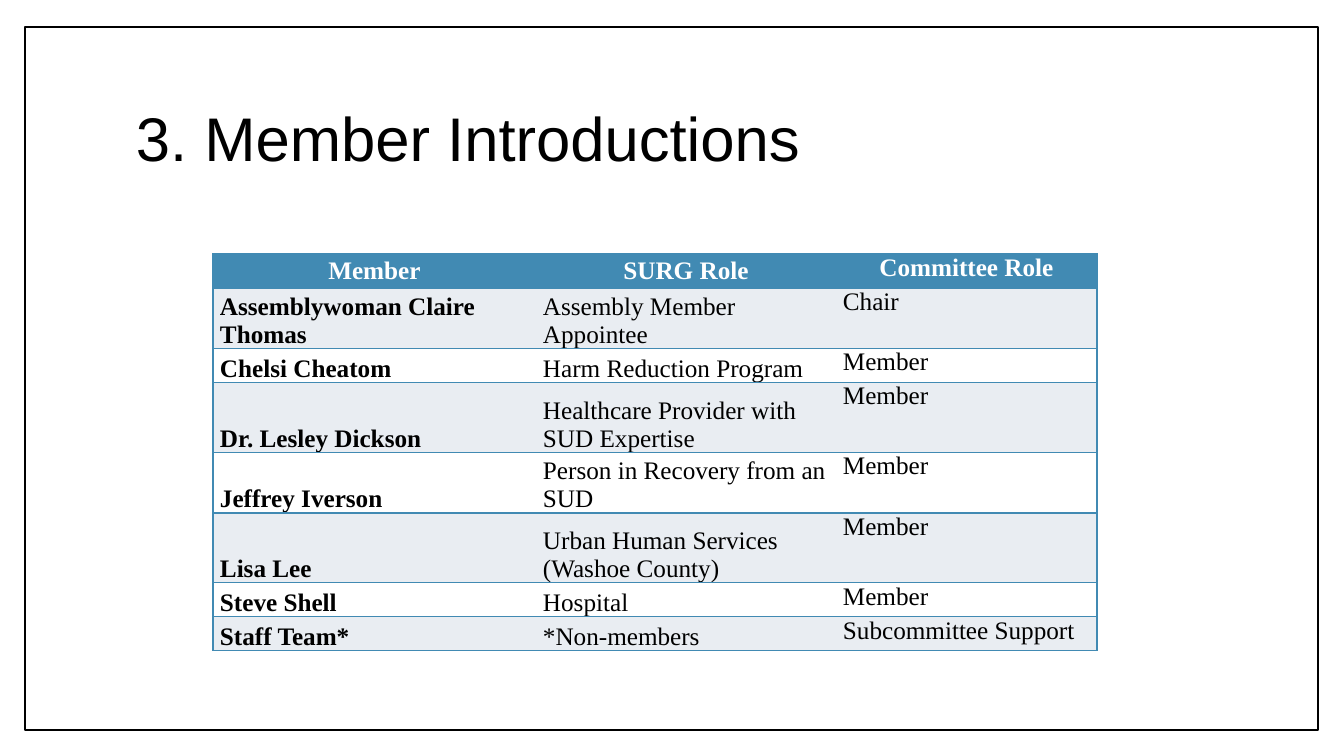
from lxml.etree import SubElement
from pptx import Presentation
from pptx.dml.color import RGBColor
from pptx.enum.shapes import MSO_SHAPE
from pptx.enum.text import MSO_ANCHOR, PP_ALIGN
from pptx.oxml.ns import qn
from pptx.util import Inches, Pt

BLUE, BAND, WHITE, BLACK = "418AB3", "E9EDF2", "FFFFFF", "000000"
WIDTHS = (323, 300, 261)
HEIGHTS = (34, 60, 34, 70, 60, 70, 34, 34)
ROWS = (
    ("Member", "SURG Role", "Committee Role"),
    ("Assemblywoman Claire Thomas", "Assembly Member Appointee", "Chair"),
    ("Chelsi Cheatom", "Harm Reduction Program", "Member"),
    ("Dr. Lesley Dickson", "Healthcare Provider with SUD Expertise", "Member"),
    ("Jeffrey Iverson", "Person in Recovery from an SUD", "Member"),
    ("Lisa Lee", "Urban Human Services (Washoe County)", "Member"),
    ("Steve Shell", "Hospital", "Member"),
    ("Staff Team*", "*Non-members", "Subcommittee Support"),
)


def px(size):
    """Turn pixels into EMU."""
    return round(size * Inches(1) / 100.8)


def color(code):
    """Turn a hex string into a colour."""
    return RGBColor.from_string(code)


def style(para, font, size, ink, bold=False, space=1.0):
    """Set the font and line spacing of a paragraph."""
    para.font.name = font
    para.font.size = Pt(size)
    para.font.bold = bold
    para.font.color.rgb = color(ink)
    para.line_spacing = space


def add_frame(slide):
    """Draw the thin border around the slide."""
    frame = slide.shapes.add_shape(
        MSO_SHAPE.RECTANGLE, px(25), px(27), px(1293), px(703))
    frame.shadow.inherit = False
    frame.fill.solid()
    frame.fill.fore_color.rgb = color(WHITE)
    frame.line.color.rgb = color(BLACK)
    frame.line.width = Pt(1)


def add_title(slide, text):
    """Write the slide title."""
    box = slide.shapes.add_textbox(px(126), px(67), px(1089), px(149))
    frame = box.text_frame
    frame.word_wrap = True
    frame.vertical_anchor = MSO_ANCHOR.MIDDLE
    frame.text = text
    style(frame.paragraphs[0], "Arial", 44, BLACK, space=0.9)


def add_edges(cell, sides):
    """Draw blue lines on the given sides of a cell and clear the rest."""
    props = cell._tc.get_or_add_tcPr()
    for side in "LRTB":
        edge = SubElement(props, qn(f"a:ln{side}"), w=str(Pt(1)))
        if side in sides:
            fill = SubElement(edge, qn("a:solidFill"))
            SubElement(fill, qn("a:srgbClr"), val=BLUE)
        else:
            SubElement(edge, qn("a:noFill"))


def fill_cell(cell, text, row, col):
    """Write and style one table cell by its place."""
    head = row == 0
    add_edges(cell, ("LTB", "TB", "RTB")[col])
    cell.fill.solid()
    cell.fill.fore_color.rgb = color(BLUE if head else (WHITE, BAND)[row % 2])
    cell.margin_left = cell.margin_right = px(7)
    cell.margin_top = cell.margin_bottom = 0
    low = MSO_ANCHOR.MIDDLE if head else MSO_ANCHOR.BOTTOM
    cell.vertical_anchor = MSO_ANCHOR.TOP if col == 2 else low
    cell.text = text
    para = cell.text_frame.paragraphs[0]
    para.alignment = PP_ALIGN.CENTER if head else PP_ALIGN.LEFT
    style(para, "Times New Roman", 18, WHITE if head else BLACK,
          head or col == 0)


def add_members(slide):
    """Build the table of members and roles."""
    table = slide.shapes.add_table(
        len(ROWS), len(WIDTHS), px(213), px(254),
        px(sum(WIDTHS)), px(sum(HEIGHTS))).table
    for col, width in zip(table.columns, WIDTHS):
        col.width = px(width)
    for row, height in zip(table.rows, HEIGHTS):
        row.height = px(height)
    for row, texts in enumerate(ROWS):
        for col, text in enumerate(texts):
            fill_cell(table.cell(row, col), text, row, col)


def main():
    """Build and save the slide."""
    deck = Presentation()
    deck.slide_width, deck.slide_height = px(1344), px(756)
    slide = deck.slides.add_slide(deck.slide_layouts[6])
    add_frame(slide)
    add_title(slide, "3. Member Introductions")
    add_members(slide)
    deck.save("out.pptx")


if __name__ == "__main__":
    main()
